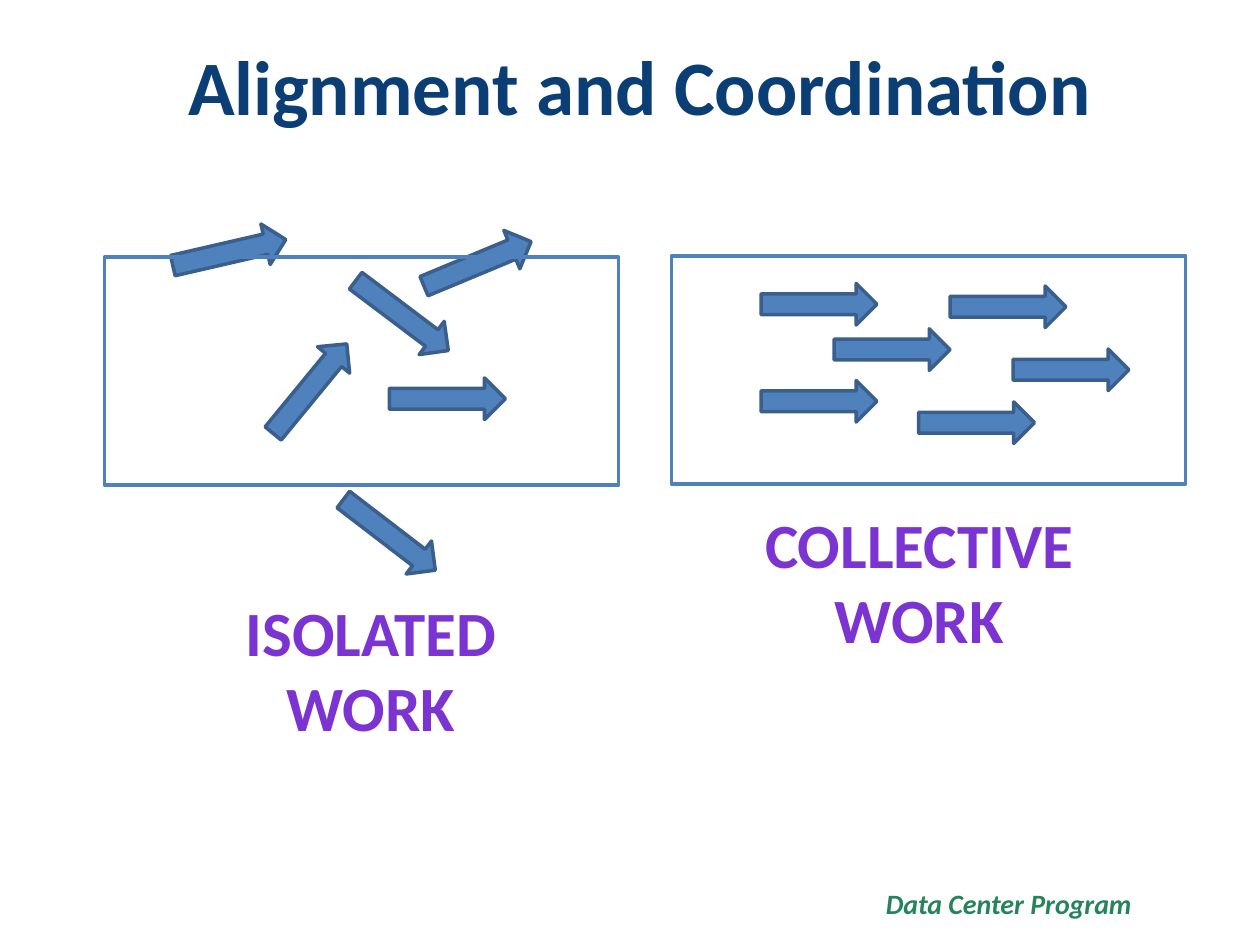
from pptx import Presentation
from pptx.dml.color import RGBColor
from pptx.enum.shapes import MSO_SHAPE
from pptx.enum.text import MSO_ANCHOR, PP_ALIGN
from pptx.util import Inches, Pt

NAVY = RGBColor(0x0B, 0x3E, 0x75)
BLUE = RGBColor(0x4F, 0x81, 0xBD)
DARK_BLUE = RGBColor(0x3A, 0x5F, 0x8C)
PURPLE = RGBColor(0x7B, 0x34, 0xD2)
GREEN = RGBColor(0x25, 0x84, 0x5B)

# Arrow positions: left, top, rotation
ISOLATED_ARROWS = [
    (3.33, 1.93, 337.4), (1.36, 1.84, 347), (2.73, 2.34, 37),
    (2, 2.92, 309.4), (3.09, 3, 0), (2.63, 4.08, 37.5),
]
COLLECTIVE_ARROWS = [
    (6.04, 2.25, 0), (6.04, 3.02, 0), (7.29, 3.19, 0),
    (6.62, 2.61, 0), (8.04, 2.77, 0), (7.54, 2.27, 0),
]


def write_text(sp, text, size, color, align, anchor, italic=False):
    tf = sp.text_frame
    tf.word_wrap = True
    tf.vertical_anchor = anchor
    tf.text = text
    p = tf.paragraphs[0]
    p.alignment = align
    font = p.runs[0].font
    font.name = "Calibri"
    font.size = Pt(size)
    font.bold = True
    font.italic = italic
    font.color.rgb = color


def add_title(s, text):
    sp = s.shapes.title
    sp.left, sp.top = Inches(0.83), Inches(0.17)
    sp.width, sp.height = Inches(8.5), Inches(1)
    write_text(sp, text, 44, NAVY, PP_ALIGN.CENTER, MSO_ANCHOR.MIDDLE)


def add_arrow(s, left, top, rotation):
    sp = s.shapes.add_shape(MSO_SHAPE.RIGHT_ARROW, Inches(left), Inches(top),
                            Inches(0.92), Inches(0.33))
    sp.rotation = rotation
    sp.shadow.inherit = False
    sp.fill.solid()
    sp.fill.fore_color.rgb = BLUE
    sp.line.color.rgb = DARK_BLUE
    sp.line.width = Pt(2)


def add_label(s, text, left, top):
    sp = s.shapes.add_textbox(Inches(left), Inches(top), Inches(3.25), Inches(1.31))
    write_text(sp, text, 36, PURPLE, PP_ALIGN.CENTER, MSO_ANCHOR.TOP)


def add_frame(s, left, top):
    sp = s.shapes.add_shape(MSO_SHAPE.RECTANGLE, Inches(left), Inches(top),
                            Inches(4.08), Inches(1.81))
    sp.shadow.inherit = False
    sp.fill.background()
    sp.line.color.rgb = BLUE
    sp.line.width = Pt(2)


def add_panel(s, arrows, label, label_at, frame_at):
    for arrow in arrows:
        add_arrow(s, *arrow)
    add_label(s, label, *label_at)
    add_frame(s, *frame_at)


def add_footer(s, text):
    sp = s.shapes.add_textbox(Inches(3.33), Inches(6.92), Inches(5.75), Inches(0.5))
    write_text(sp, text, 16, GREEN, PP_ALIGN.RIGHT, MSO_ANCHOR.MIDDLE, italic=True)


def main():
    prs = Presentation()
    prs.slide_width, prs.slide_height = Inches(10), Inches(7.5)
    s = prs.slides.add_slide(prs.slide_layouts[5])

    add_footer(s, "Data Center Program")
    add_title(s, "Alignment and Coordination")

    # Scattered arrows on the left, aligned arrows on the right
    add_panel(s, ISOLATED_ARROWS, "ISOLATED WORK", (1.32, 4.66), (0.83, 2.04))
    add_panel(s, COLLECTIVE_ARROWS, "COLLECTIVE WORK", (5.67, 3.96), (5.33, 2.03))

    prs.save("out.pptx")


if __name__ == "__main__":
    main()
